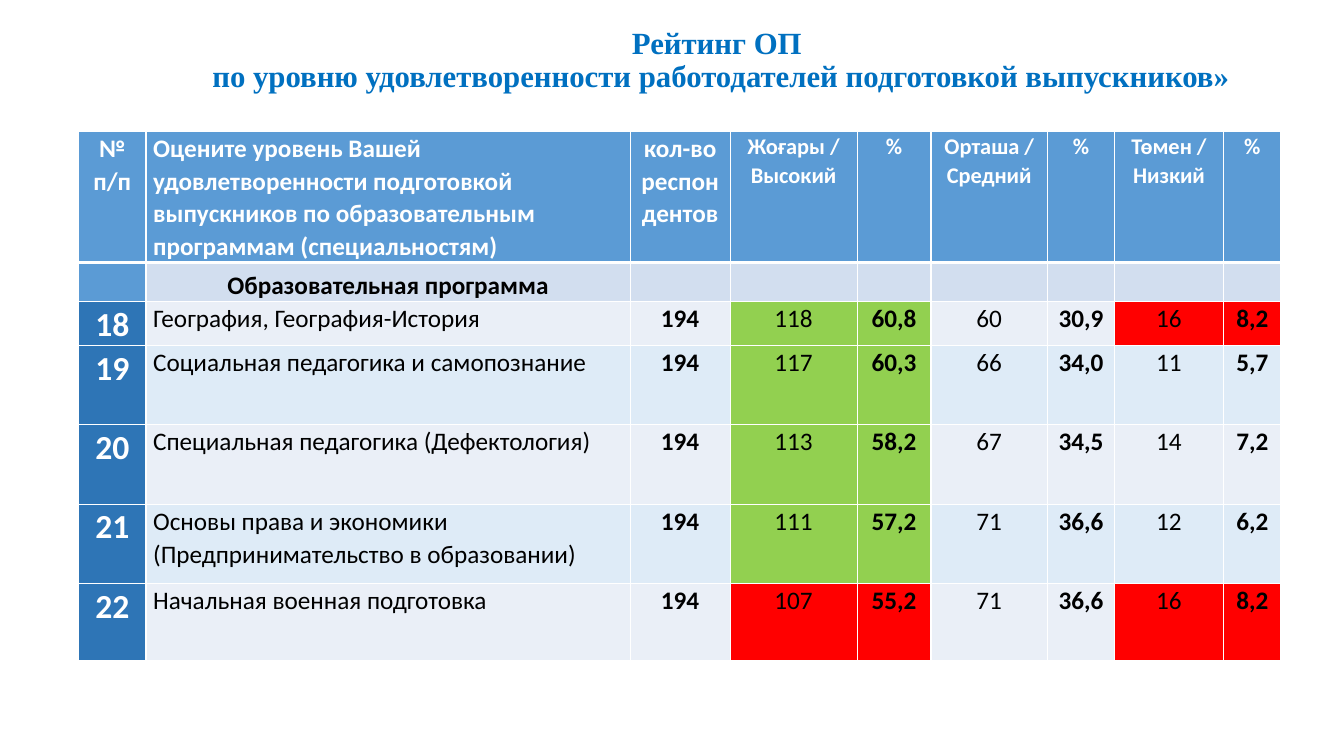
from dataclasses import dataclass

from lxml.etree import SubElement as Sub
from pptx import Presentation
from pptx.dml.color import RGBColor as RGB
from pptx.enum.text import MSO_ANCHOR as Anchor, MSO_AUTO_SIZE as Fit, PP_ALIGN as Align
from pptx.oxml.ns import qn
from pptx.util import Cm, Pt


@dataclass(frozen=True)
class Theme:
    serif: str = "Times New Roman"
    sans: str = "Calibri"
    title: str = "0070C0"
    head: str = "5B9BD5"
    group: str = "D2DEEF"
    index: str = "2E75B6"
    bands: tuple = ("EAEFF7", "DEEBF7")
    good: str = "92D050"
    bad: str = "FF0000"
    white: str = "FFFFFF"
    black: str = "000000"
    big: int = 24
    top: int = 22
    body: int = 18
    small: int = 16


T = Theme()
TITLE = ("Рейтинг ОП ", "по уровню удовлетворенности работодателей подготовкой выпускников»")
HEADS = (
    "№ п/п",
    "Оцените уровень Вашей удовлетворенности подготовкой выпускников "
    "по образовательным программам (специальностям)",
    "кол-во респондентов",
    "Жоғары / Высокий", "%", "Орташа / Средний", "%", "Төмен / Низкий", "%",
)
GROUP = "Образовательная программа"
TOTAL = 194
FIRST = 18
DATA = (
    ("География, География-История", 118, 60, 16),
    ("Социальная педагогика и самопознание", 117, 66, 11),
    ("Специальная педагогика (Дефектология)", 113, 67, 14),
    ("Основы права и экономики (Предпринимательство в образовании)", 111, 71, 12),
    ("Начальная военная подготовка", 107, 71, 16),
)
COLS = (1.7, 12.2, 2.52, 3.2, 1.86, 2.94, 1.68, 2.76, 1.44)
ROWS = (2.7, 0.98, 0.97, 2, 2, 2, 1.94)


def write(frame, *lines, size=T.body, color=T.black, bold=True,
          font=T.sans, align=Align.CENTER, space=1.07):
    para = frame.paragraphs[0]
    para.alignment = align
    para.line_spacing = space
    for i, line in enumerate(lines):
        if i:
            para.add_line_break()
        run = para.add_run()
        run.text = line
        face = run.font
        face.name, face.size, face.bold = font, Pt(size), bold
        face.color.rgb = RGB.from_string(color)


def edge(cell, side, width):
    line = Sub(cell._tc.get_or_add_tcPr(), qn("a:ln" + side), w=str(Pt(width)))
    fill = Sub(line, qn("a:solidFill"))
    Sub(fill, qn("a:srgbClr"), val=T.white)


def paint(cell, fill, top=1, base=1):
    for side, width in zip("LRTB", (1, 1, top, base)):
        edge(cell, side, width)
    cell.fill.solid()
    cell.fill.fore_color.rgb = RGB.from_string(fill)
    cell.margin_left = cell.margin_right = Cm(0.18)
    cell.margin_top = cell.margin_bottom = 0


def head(cells):
    for i, (cell, text) in enumerate(zip(cells, HEADS)):
        paint(cell, T.head, base=3)
        write(cell.text_frame, text, color=T.white,
              size=T.body if i < 3 else T.small,
              align=Align.LEFT if i == 1 else Align.CENTER)


def group(cells):
    for i, cell in enumerate(cells):
        paint(cell, T.group if i else T.head, top=3)
    cells[1].vertical_anchor = Anchor.BOTTOM
    write(cells[1].text_frame, GROUP)


def entry(cells, rank, item):
    name, high, mid, low = item
    band = T.bands[rank % 2]
    least = min(row[1] for row in DATA)
    most = max(row[3] for row in DATA)
    tints = (T.bad if high == least else T.good, band, T.bad if low == most else band)
    texts = [str(FIRST + rank), name, str(TOTAL)]
    fills = [T.index, band, band]
    for count, tint in zip((high, mid, low), tints):
        texts += [str(count), f"{count / TOTAL:.1%}".rstrip("%").replace(".", ",")]
        fills += [tint, tint]
    for i, (cell, text, fill) in enumerate(zip(cells, texts, fills)):
        paint(cell, fill)
        write(cell.text_frame, text, bold=i % 2 == 0,
              size=T.body if i else T.big,
              color=T.black if i else T.white,
              align=Align.LEFT if i == 1 else Align.CENTER)


def title(slide, box):
    shape = slide.shapes.title
    shape.left, shape.top, shape.width, shape.height = map(Cm, box)
    frame = shape.text_frame
    frame.auto_size = Fit.NONE
    frame.word_wrap = True
    frame.vertical_anchor = Anchor.MIDDLE
    write(frame, *TITLE, size=T.top, color=T.title, font=T.serif, space=0.9)


def rating(slide, box):
    table = slide.shapes.add_table(len(ROWS), len(COLS), *map(Cm, box)).table
    for col, width in zip(table.columns, COLS):
        col.width = Cm(width)
    for row, height in zip(table.rows, ROWS):
        row.height = Cm(height)
    rows = [list(row.cells) for row in table.rows]
    head(rows[0])
    group(rows[1])
    for rank, item in enumerate(DATA):
        entry(rows[rank + 2], rank, item)


def main():
    deck = Presentation()
    deck.slide_width, deck.slide_height = Cm(33.87), Cm(19.05)
    slide = deck.slides.add_slide(deck.slide_layouts[5])
    title(slide, (3.56, 0.46, 29.2, 2.16))
    rating(slide, (1.98, 3.3, sum(COLS), sum(ROWS)))
    deck.save("out.pptx")


if __name__ == "__main__":
    main()
